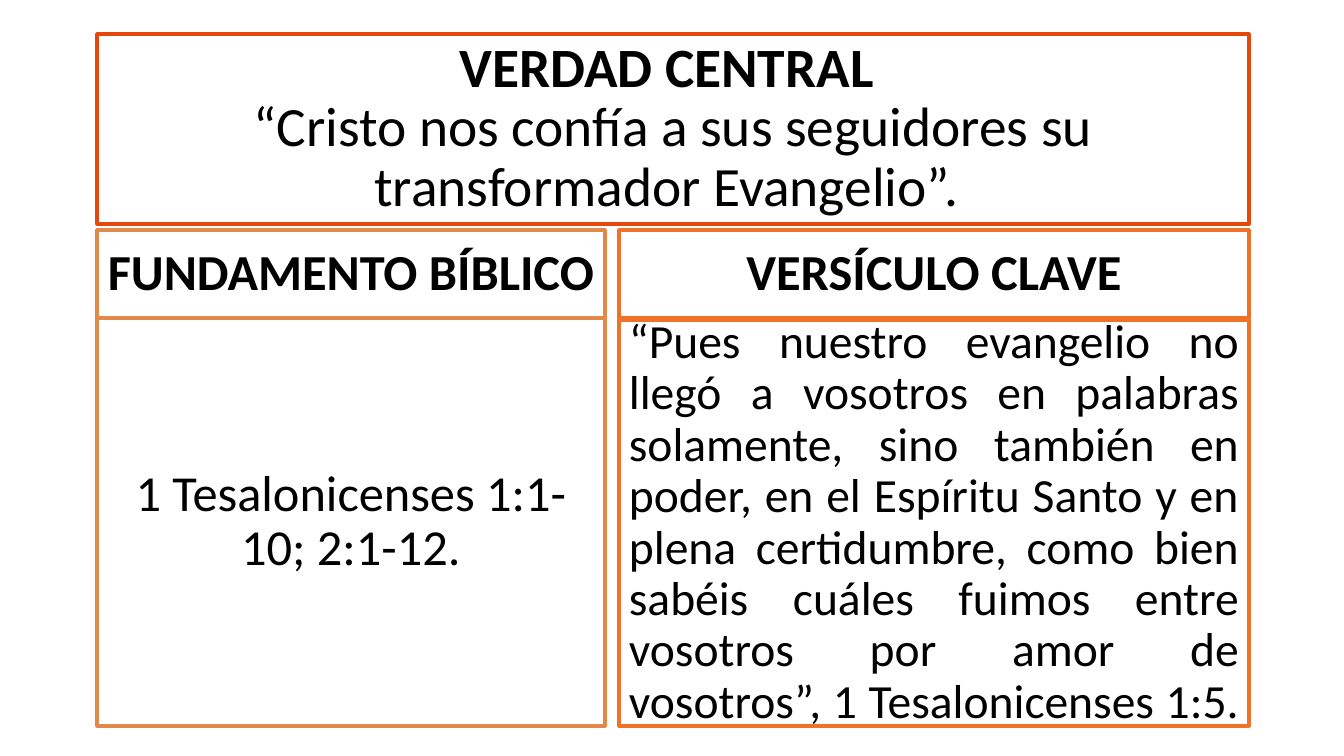
from pptx import Presentation
from pptx import util as u
from pptx.dml.color import RGBColor
from pptx.enum import shapes, text

EMU_PER_PX = 914400 / 100.8


def px(length):
    return u.Emu(round(length * EMU_PER_PX))


def write(shape, runs, size, align=text.PP_ALIGN.CENTER, color="000000"):
    """Fill a box with one paragraph made of (wording, bold) runs."""
    frame = shape.text_frame
    frame.word_wrap = True
    frame.auto_size = text.MSO_AUTO_SIZE.NONE
    frame.vertical_anchor = text.MSO_ANCHOR.MIDDLE
    frame.margin_left = frame.margin_right = u.Inches(0.1)
    frame.margin_top = frame.margin_bottom = u.Inches(0.05)
    paragraph = frame.paragraphs[0]
    paragraph.alignment = align
    paragraph.line_spacing = 0.9
    paragraph.space_before = u.Pt(0)
    for wording, bold in runs:
        if wording == "\n":
            paragraph.add_line_break()
            continue
        run = paragraph.add_run()
        run.text = wording
        run.font.name = "Calibri"
        run.font.size = u.Pt(size)
        run.font.bold = bold
        run.font.color.rgb = RGBColor.from_string(color)


def outline(shape, color):
    shape.line.color.rgb = RGBColor.from_string(color)
    shape.line.width = u.Pt(2.25)


presentation = Presentation()
presentation.slide_width, presentation.slide_height = px(1344), px(756)
slide = presentation.slides.add_slide(presentation.slide_layouts[5])

# Central truth
title = slide.shapes.title
title.left, title.top, title.width, title.height = px(97), px(34), px(1152), px(190)
outline(title, "E6480B")
write(title, [
    ("VERDAD CENTRAL ", True),
    ("\n", True),
    ("“Cristo nos confía a sus seguidores su transformador Evangelio”. ", False),
], size=39.6)

# Two columns: a heading box above a content box
top, heading_height, bottom = 230, 88, 726
verse = (
    "“Pues nuestro evangelio no llegó a vosotros en palabras solamente, "
    "sino también en poder, en el Espíritu Santo y en plena certidumbre, "
    "como bien sabéis cuáles fuimos entre vosotros por amor de vosotros”, "
    "1 Tesalonicenses 1:5. "
)
columns = [
    (97, 508, 318, "E2884B", "FUNDAMENTO BÍBLICO",
     "1 Tesalonicenses 1:1-10; 2:1-12.", 36, text.PP_ALIGN.CENTER),
    (619, 630, 320, "F07128", "VERSÍCULO CLAVE",
     verse, 34, text.PP_ALIGN.JUSTIFY),
]
for left, width, content_top, color, heading, content, size, align in columns:
    boxes = [
        (top, heading_height, heading, True, 36, text.PP_ALIGN.CENTER),
        (content_top, bottom - content_top, content, False, size, align),
    ]
    for box_top, height, wording, bold, box_size, box_align in boxes:
        box = slide.shapes.add_shape(
            shapes.MSO_SHAPE.RECTANGLE, px(left), px(box_top), px(width), px(height))
        box.shadow.inherit = False
        box.fill.background()
        outline(box, color)
        write(box, [(wording, bold)], size=box_size, align=box_align)

presentation.save("out.pptx")
